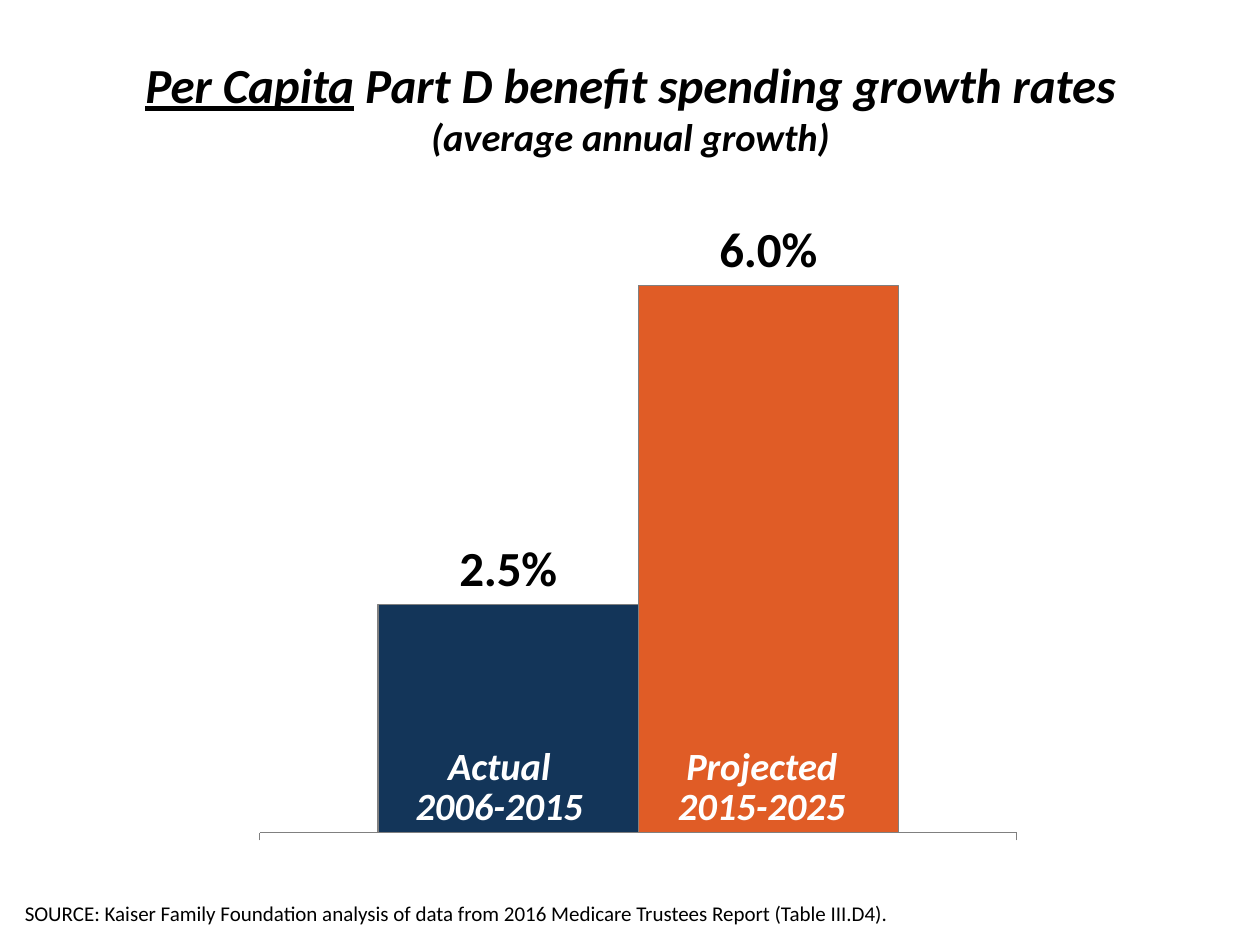
from lxml import etree
from pptx import Presentation
from pptx.chart.data import CategoryChartData
from pptx.dml.color import RGBColor
from pptx.enum.chart import XL_CHART_TYPE, XL_LABEL_POSITION, XL_TICK_LABEL_POSITION, XL_TICK_MARK
from pptx.enum.text import MSO_ANCHOR, PP_ALIGN
from pptx.oxml import parse_xml
from pptx.oxml.ns import nsdecls, qn
from pptx.util import Cm, Pt

COLORS = {
    "text": "000000",
    "light": "FFFFFF",
    "actual": "133559",
    "projected": "E05C26",
    "line": "808080",
}
NO_GRID_STYLE = "{2D5ABB26-0587-4C30-8999-92F81FD0307C}"
HEADING = {"size": Pt(28), "bold": True, "italic": True}
SUBHEADING = {**HEADING, "size": Pt(22)}


def rgb(name):
    return RGBColor.from_string(COLORS[name])


class SlideBuilder:
    def __init__(self, slide, font_name="Calibri"):
        self.slide = slide
        self.font_name = font_name

    def format_font(self, font, color="text", **values):
        for name, value in {"name": self.font_name, **values}.items():
            setattr(font, name, value)
        font.color.rgb = rgb(color)

    def add_runs(self, paragraph, runs, alignment):
        paragraph.alignment = alignment
        for text, values in runs:
            run = paragraph.add_run()
            run.text = text
            self.format_font(run.font, **values)

    def title(self, box, lines):
        title = self.slide.shapes.title
        for name, length in zip(("left", "top", "width", "height"), box):
            setattr(title, name, Cm(length))
        frame = title.text_frame
        frame.word_wrap = True
        frame.vertical_anchor = MSO_ANCHOR.TOP
        for index, runs in enumerate(lines):
            paragraph = frame.add_paragraph() if index else frame.paragraphs[0]
            paragraph.space_before = Pt(0)
            paragraph.line_spacing = 1.0
            self.add_runs(paragraph, runs, PP_ALIGN.CENTER)

    def text(self, box, text, **values):
        frame = self.slide.shapes.add_textbox(*map(Cm, box)).text_frame
        frame.word_wrap = True
        frame.vertical_anchor = MSO_ANCHOR.BOTTOM
        self.add_runs(frame.paragraphs[0], [(text, values)], PP_ALIGN.LEFT)

    def column_chart(self, box, series_values, fills, plot_area):
        data = CategoryChartData(number_format="0.0%")
        data.categories = ["1"]
        for name, value in series_values.items():
            data.add_series(name, [value])
        chart = self.slide.shapes.add_chart(
            XL_CHART_TYPE.COLUMN_CLUSTERED, *map(Cm, box), data
        ).chart
        chart.has_legend = chart.has_title = False
        self.clear_background(chart)
        self.place_plot(chart, plot_area)
        self.format_font(chart.font, size=Pt(18))

        category_axis, value_axis = chart.category_axis, chart.value_axis
        category_axis.tick_label_position = XL_TICK_LABEL_POSITION.NONE
        category_axis.major_tick_mark = XL_TICK_MARK.OUTSIDE
        category_axis.format.line.color.rgb = rgb("line")
        category_axis.format.line.width = Pt(0.75)
        value_axis.has_major_gridlines = False
        value_axis.minimum_scale, value_axis.maximum_scale = 0, 0.07
        value_axis.visible = False

        plot = chart.plots[0]
        plot.vary_by_categories = False
        plot.gap_width, plot.overlap = 91, 0
        for series, fill in zip(plot.series, fills):
            series.format.fill.solid()
            series.format.fill.fore_color.rgb = rgb(fill)
            series.format.line.color.rgb = rgb("line")
            series.format.line.width = Pt(0.75)
            labels = series.data_labels
            labels.show_value = True
            labels.number_format = "0.0%"
            labels.number_format_is_linked = False
            labels.position = XL_LABEL_POSITION.OUTSIDE_END
            self.format_font(labels.font, size=Pt(28), bold=True)

    @staticmethod
    def clear_background(chart):
        chart.element.find(qn("c:chart")).addnext(parse_xml(
            f'<c:spPr {nsdecls("c", "a")}><a:noFill/><a:ln><a:noFill/></a:ln></c:spPr>'
        ))

    @staticmethod
    def place_plot(chart, plot_area):
        """Fix the inner plot area, given as fractions x, y, w, h."""
        area = chart.element.find(".//" + qn("c:plotArea"))
        for old_layout in area.findall(qn("c:layout")):
            area.remove(old_layout)
        layout = etree.Element(qn("c:layout"))
        manual = etree.SubElement(layout, qn("c:manualLayout"))
        settings = {"layoutTarget": "inner", "xMode": "edge", "yMode": "edge"}
        settings.update(zip("xywh", plot_area))
        for name, value in settings.items():
            etree.SubElement(manual, qn(f"c:{name}"), val=str(value))
        area.insert(0, layout)

    def label_table(self, box, labels, **values):
        table = self.slide.shapes.add_table(1, len(labels), *map(Cm, box)).table
        table.first_row = table.horz_banding = False
        table._tbl.tblPr.find(qn("a:tableStyleId")).text = NO_GRID_STYLE
        for cell, label in zip(table.rows[0].cells, labels):
            cell.fill.background()
            paragraph = cell.text_frame.paragraphs[0]
            paragraph.text = label
            paragraph.alignment = PP_ALIGN.CENTER
            paragraph.line_spacing = 0.85
            for run in paragraph.runs:
                self.format_font(run.font, **values)


def main():
    presentation = Presentation()
    presentation.slide_width, presentation.slide_height = Cm(25.4), Cm(19.05)
    builder = SlideBuilder(presentation.slides.add_slide(presentation.slide_layouts[5]))

    builder.column_chart(
        (5.08, 0.36, 15.57, 16.94),
        {"Series 1": 0.025, "Series 2": 0.06},
        ("actual", "projected"),
        (0.01, 0.21, 0.98, 0.76),
    )
    builder.text(
        (0.25, 17.27, 23.11, 1.52),
        "SOURCE: Kaiser Family Foundation analysis of data from 2016 Medicare "
        "Trustees Report (Table III.D4).",
        size=Pt(12),
    )
    builder.title((2.46, 0.97, 20.5, 2.39), [
        [("Per Capita", {**HEADING, "underline": True}),
         (" Part D benefit spending growth rates", HEADING)],
        [("(average annual growth)", SUBHEADING)],
    ])
    builder.label_table(
        (7.42, 14.96, 10.58, 1.83),
        ("Actual\v2006-2015", "Projected\v2015-2025"),
        color="light", **SUBHEADING,
    )
    presentation.save("out.pptx")


if __name__ == "__main__":
    main()
